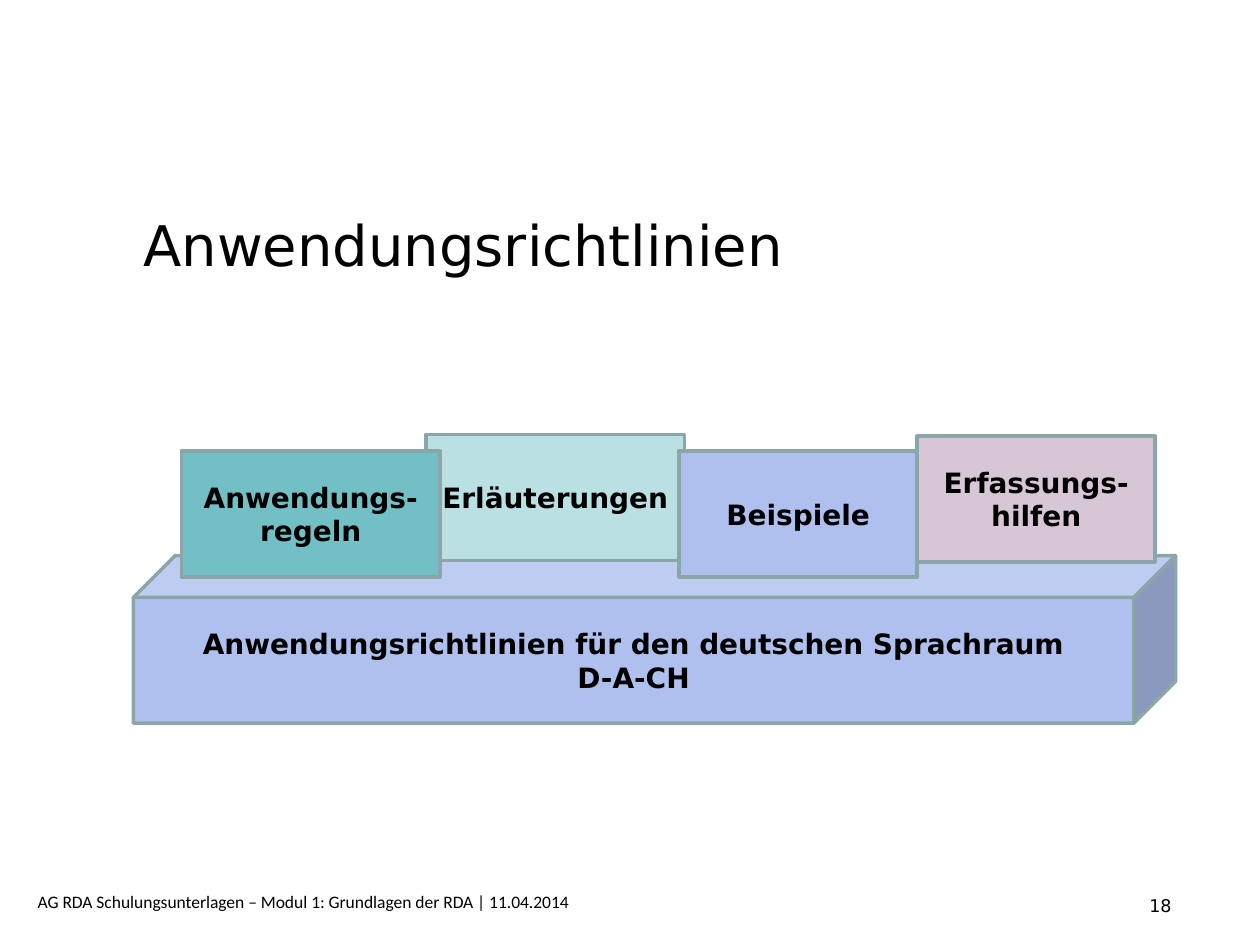
from pptx import Presentation
from pptx.dml.color import RGBColor
from pptx.enum.shapes import MSO_SHAPE as Shape
from pptx.enum.text import MSO_ANCHOR as Anchor, PP_ALIGN as Align
from pptx.util import Cm, Pt

COLORS = {
    "text": "000000",
    "outline": "8AA6A8",
    "base": "AFC0EF",
    "rules": "72BFC5",
    "notes": "BBE0E3",
    "examples": "AFC0EF",
    "aids": "D7C7D6",
}
SANS = "DejaVu Sans"
BLOCK_HEIGHT = 2.54
BLOCKS = [
    ("Erläuterungen", "notes", 5.9, 0, 5.21),
    ("Beispiele", "examples", 11, 0.33, 4.8),
    ("Erfassungs-\nhilfen", "aids", 15.8, 0.03, 4.8),
    ("Anwendungs-regeln", "rules", 0.97, 0.33, 5.21),
]


def color(name):
    return RGBColor.from_string(COLORS[name])


def write(shape, text, size, font=SANS, bold=False, align=Align.LEFT, anchor=Anchor.TOP):
    frame = shape.text_frame
    frame.word_wrap = True
    frame.vertical_anchor = anchor
    frame.text = text
    for para in frame.paragraphs:
        para.alignment = align
        for span in para.runs:
            span.font.name = font
            span.font.size = Pt(size)
            span.font.bold = bold
            span.font.color.rgb = color("text")


def add_label(page, box, text, size, **style):
    label = page.shapes.add_textbox(*map(Cm, box))
    write(label, text, size, **style)


def add_block(page, kind, box, text, fill):
    block = page.shapes.add_shape(kind, *map(Cm, box))
    block.shadow.inherit = False
    block.fill.solid()
    block.fill.fore_color.rgb = color(fill)
    block.line.color.rgb = color("outline")
    block.line.width = Pt(2)
    write(block, text, 16, bold=True, align=Align.CENTER, anchor=Anchor.MIDDLE)


def add_footer(page, box):
    left, top, width, height = box
    add_label(page, (left, top, 17.81, height),
              "AG RDA Schulungsunterlagen – Modul 1: Grundlagen der RDA | 11.04.2014",
              10, font="Calibri")
    add_label(page, (left + width - 2, top + 0.08, 2, 0.8), "18", 10)


def add_title(page, box):
    add_label(page, box, "Anwendungsrichtlinien", 32, anchor=Anchor.MIDDLE)


def add_foundation(page, box):
    left, top, width, height = box
    base_height = 3.38
    add_block(page, Shape.CUBE, (left, top + height - base_height, width, base_height),
              "Anwendungsrichtlinien für den deutschen Sprachraum\nD-A-CH", "base")
    for text, fill, across, down, block_width in BLOCKS:
        add_block(page, Shape.RECTANGLE,
                  (left + across, top + down, block_width, BLOCK_HEIGHT), text, fill)


def main():
    deck = Presentation()
    deck.slide_width, deck.slide_height = Cm(25.4), Cm(19.05)
    page = deck.slides.add_slide(deck.slide_layouts[6])
    add_footer(page, (0.51, 17.83, 24.41, 0.69))
    add_title(page, (2.64, 3.53, 22.76, 2.79))
    add_foundation(page, (2.69, 8.76, 21.01, 5.82))
    deck.save("out.pptx")


if __name__ == "__main__":
    main()
